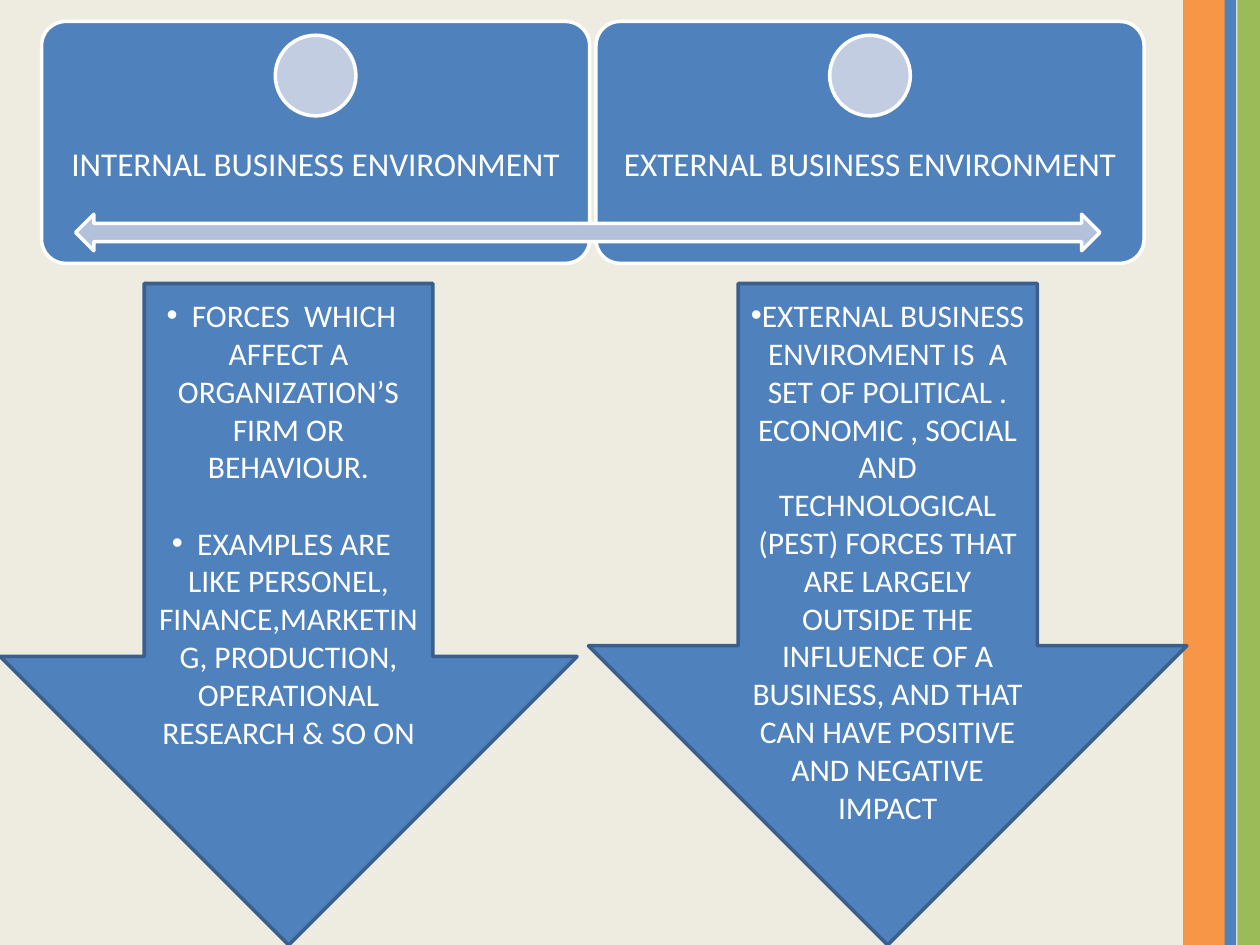
from dataclasses import dataclass

from lxml.etree import SubElement
from pptx import Presentation
from pptx.dml.color import RGBColor
from pptx.enum.shapes import MSO_SHAPE as Shape
from pptx.enum.text import MSO_ANCHOR as Anchor, PP_ALIGN as Align
from pptx.oxml.ns import qn
from pptx.util import Inches, Pt


@dataclass(frozen=True)
class Theme:
    font: str = "Calibri"
    background: str = "EEECE1"
    blue: str = "4F81BD"
    blue_edge: str = "3A5F8C"
    orange: str = "F79646"
    green: str = "9BBB59"
    dot: str = "C2CDE1"
    link: str = "B3C1DB"
    white: str = "FFFFFF"
    heading_size: int = 19
    body_size: int = 18
    line_width: int = 2


theme = Theme()
prs = Presentation()
prs.slide_width, prs.slide_height = Inches(10), Inches(7.5)
slide = prs.slides.add_slide(prs.slide_layouts[6])
slide.background.fill.solid()
slide.background.fill.fore_color.rgb = RGBColor.from_string(theme.background)


def add_block(kind, left, top, width, height, fill, edge=None):
    block = slide.shapes.add_shape(
        kind, Inches(left), Inches(top), Inches(width), Inches(height))
    block.shadow.inherit = False
    block.fill.solid()
    block.fill.fore_color.rgb = RGBColor.from_string(fill)
    if edge:
        block.line.color.rgb = RGBColor.from_string(edge)
        block.line.width = Pt(theme.line_width)
    else:
        block.line.fill.background()
    return block


def add_text(paragraph, text, size):
    paragraph.alignment = Align.CENTER
    run = paragraph.add_run()
    run.text = text
    run.font.name = theme.font
    run.font.size = Pt(size)
    run.font.color.rgb = RGBColor.from_string(theme.white)


# Stripes on the right edge
for left, width, color in [(9.39, 0.35, theme.orange),
                           (9.82, 0.18, theme.green),
                           (9.72, 0.09, theme.blue)]:
    add_block(Shape.RECTANGLE, left, 0, width, 7.5, color)

# Heading cards
card_width, dot_size = 4.35, 0.64
for left, heading in [(0.33, "INTERNAL BUSINESS ENVIRONMENT"),
                      (4.73, "EXTERNAL BUSINESS ENVIRONMENT")]:
    card = add_block(Shape.ROUNDED_RECTANGLE, left, 0.17, card_width, 1.92,
                     theme.blue, theme.white)
    card.adjustments[0] = 0.1
    add_block(Shape.OVAL, left + (card_width - dot_size) / 2, 0.28,
              dot_size, dot_size, theme.dot, theme.white)
    label = slide.shapes.add_textbox(
        Inches(left), Inches(0.93), Inches(card_width), Inches(0.77)).text_frame
    label.word_wrap = True
    label.vertical_anchor = Anchor.MIDDLE
    label.margin_left = label.margin_right = Inches(0.15)
    label.margin_top = label.margin_bottom = Inches(0.15)
    label.paragraphs[0].line_spacing = 0.9
    add_text(label.paragraphs[0], heading, theme.heading_size)

# Arrow linking the two cards
add_block(Shape.LEFT_RIGHT_ARROW, 0.6, 1.7, 8.13, 0.29, theme.link, theme.white)

# Down arrows with bulleted descriptions: left, width, bullet indent, points
descriptions = [
    (0, 4.58, -0.2, [
        "FORCES  WHICH AFFECT A ORGANIZATION’S FIRM OR BEHAVIOUR.",
        "EXAMPLES ARE LIKE PERSONEL, FINANCE,MARKETING, PRODUCTION, "
        "OPERATIONAL RESEARCH & SO ON"]),
    (4.67, 4.75, 0, [
        "EXTERNAL BUSINESS ENVIROMENT IS  A SET OF POLITICAL . ECONOMIC , "
        "SOCIAL AND TECHNOLOGICAL (PEST) FORCES THAT ARE LARGELY OUTSIDE THE "
        "INFLUENCE OF A BUSINESS, AND THAT CAN HAVE POSITIVE AND NEGATIVE "
        "IMPACT"]),
]
for left, width, indent, points in descriptions:
    arrow = add_block(Shape.DOWN_ARROW, left, 2.25, width, 5.25,
                      theme.blue, theme.blue_edge)
    body = arrow.text_frame
    body.word_wrap = True
    body.vertical_anchor = Anchor.TOP
    body.margin_top = Inches(0.1)
    for number, point in enumerate(points):
        paragraph = body.add_paragraph() if number else body.paragraphs[0]
        if number:
            paragraph.space_before = Pt(22)
        props = paragraph._p.get_or_add_pPr()
        props.set("marL", "0")
        props.set("indent", str(Inches(indent)))
        SubElement(props, qn("a:buFont")).set("typeface", "Arial")
        SubElement(props, qn("a:buChar")).set("char", "•")
        add_text(paragraph, point, theme.body_size)

prs.save("out.pptx")
